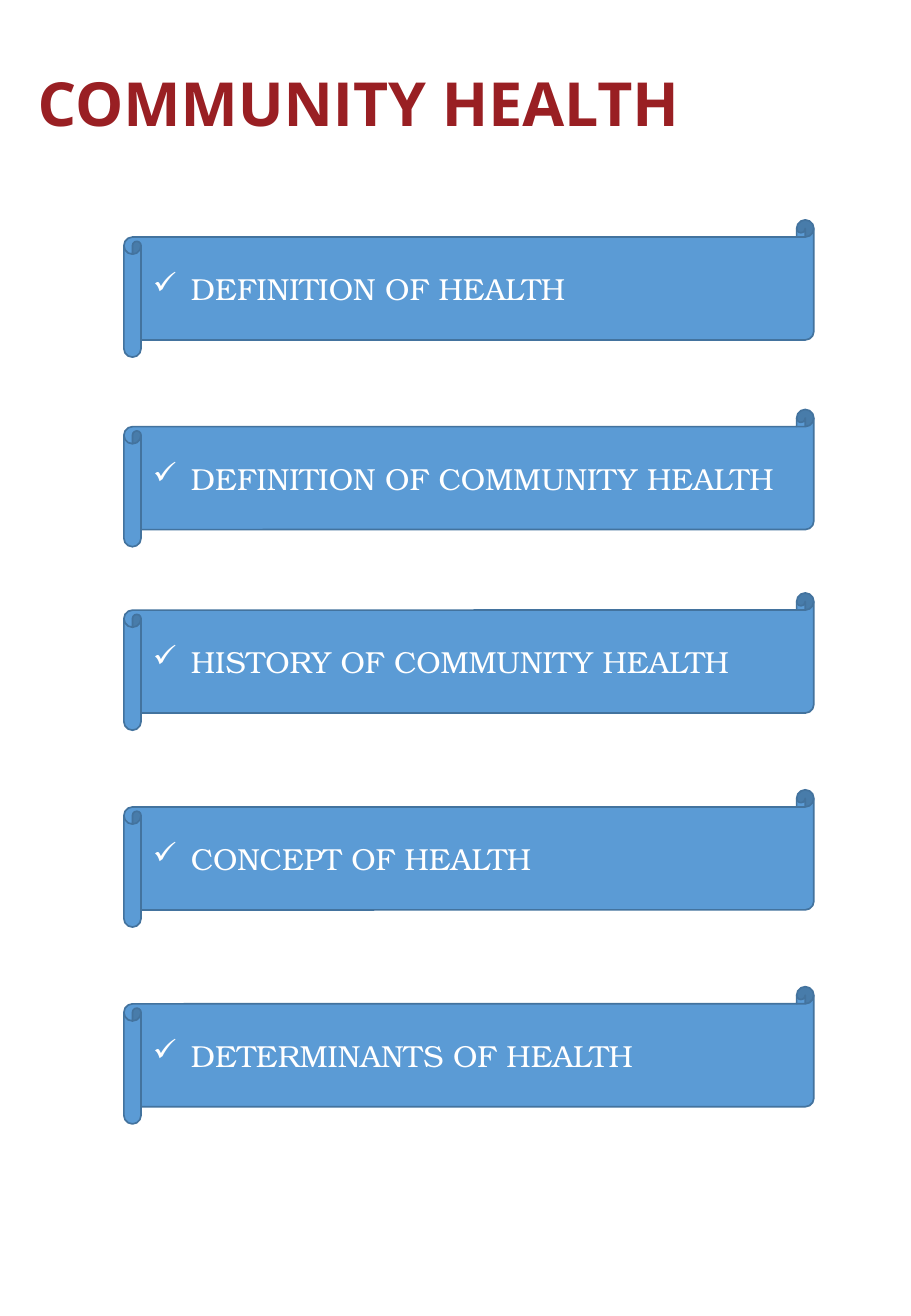
from dataclasses import dataclass

import pptx
import pptx.dml.color
import pptx.enum.shapes
import pptx.enum.text
import pptx.oxml
import pptx.oxml.ns
import pptx.slide
import pptx.text.text
import pptx.util

Pt = pptx.util.Pt
RGBColor = pptx.dml.color.RGBColor
MIDDLE = pptx.enum.text.MSO_ANCHOR.MIDDLE
LEFT = pptx.enum.text.PP_ALIGN.LEFT


@dataclass(frozen=True)
class Theme:
    heading: RGBColor = RGBColor(0x99, 0x1F, 0x23)
    scroll_fill: RGBColor = RGBColor(0x5B, 0x9B, 0xD5)
    scroll_line: RGBColor = RGBColor(0x43, 0x73, 0x9E)
    topic: RGBColor = RGBColor(0xFF, 0xFF, 0xFF)
    heading_font: str = "Open Sans"
    topic_font: str = "TeX Gyre Bonum"
    heading_size: float = 36
    topic_size: float = 18


@dataclass(frozen=True)
class Topic:
    label: str
    top: float


THEME = Theme()
SCROLL_LEFT, SCROLL_WIDTH, SCROLL_HEIGHT = 73.44, 408.96, 81.36
BULLET_INDENT = 22.5
TOPICS = [
    Topic("DEFINITION OF HEALTH", 130.32),
    Topic("DEFINITION OF COMMUNITY HEALTH", 242.64),
    Topic("HISTORY OF COMMUNITY HEALTH", 351.36),
    Topic("CONCEPT OF HEALTH", 468),
    Topic("DETERMINANTS OF HEALTH", 584.64),
]


def apply_format(target: object, values: dict[str, object]) -> None:
    for attribute, value in values.items():
        setattr(target, attribute, value)


def add_check_bullet(paragraph: pptx.text.text._Paragraph) -> None:
    properties = paragraph._p.get_or_add_pPr()
    properties.set("marL", str(Pt(BULLET_INDENT)))
    properties.set("indent", str(-Pt(BULLET_INDENT)))
    properties.append(pptx.oxml.parse_xml(
        f'<a:buChar {pptx.oxml.ns.nsdecls("a")} char="✓"/>'))


def write_line(paragraph: pptx.text.text._Paragraph, text: str,
               font: dict[str, object], color: RGBColor) -> None:
    paragraph.alignment = LEFT
    run = paragraph.add_run()
    run.text = text
    apply_format(run.font, font)
    run.font.color.rgb = color


def add_heading(slide: pptx.slide.Slide, text: str) -> None:
    heading = slide.shapes.title
    apply_format(heading, {"left": Pt(-3.6), "top": Pt(35.28),
                           "width": Pt(563.76), "height": Pt(51.12)})
    frame = heading.text_frame
    apply_format(frame, {"margin_left": Pt(25.9), "margin_top": 0,
                         "margin_bottom": 0, "vertical_anchor": MIDDLE,
                         "word_wrap": True,
                         "auto_size": pptx.enum.text.MSO_AUTO_SIZE.NONE})
    write_line(frame.paragraphs[0], text,
               {"name": THEME.heading_font, "size": Pt(THEME.heading_size),
                "bold": True}, THEME.heading)


def add_topic(slide: pptx.slide.Slide, topic: Topic) -> None:
    scroll = slide.shapes.add_shape(
        pptx.enum.shapes.MSO_SHAPE.HORIZONTAL_SCROLL,
        Pt(SCROLL_LEFT), Pt(topic.top), Pt(SCROLL_WIDTH), Pt(SCROLL_HEIGHT))
    scroll.shadow.inherit = False
    scroll.fill.solid()
    scroll.fill.fore_color.rgb = THEME.scroll_fill
    scroll.line.color.rgb = THEME.scroll_line
    scroll.line.width = Pt(1)
    frame = scroll.text_frame
    apply_format(frame, {"vertical_anchor": MIDDLE, "word_wrap": True})
    paragraph = frame.paragraphs[0]
    add_check_bullet(paragraph)
    write_line(paragraph, topic.label,
               {"name": THEME.topic_font, "size": Pt(THEME.topic_size)},
               THEME.topic)


def main() -> None:
    presentation = pptx.Presentation()
    apply_format(presentation, {"slide_width": Pt(540),
                                "slide_height": Pt(779.76)})
    title_only = presentation.slide_layouts.get_by_name("Title Only")
    slide = presentation.slides.add_slide(title_only)
    add_heading(slide, "COMMUNITY HEALTH")
    for topic in TOPICS:
        add_topic(slide, topic)
    presentation.save("out.pptx")


if __name__ == "__main__":
    main()
